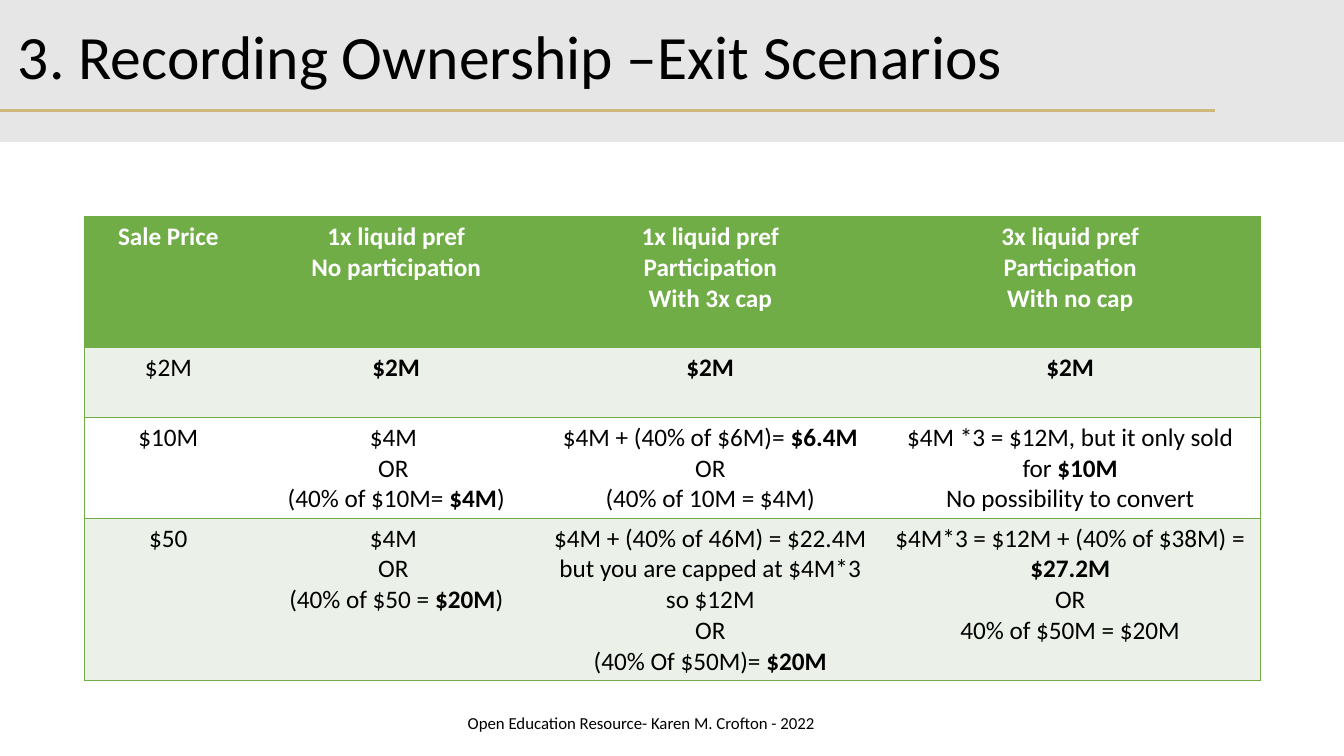
from lxml.etree import SubElement
from pptx import Presentation
from pptx.dml.color import RGBColor
from pptx.enum.shapes import MSO_CONNECTOR, MSO_SHAPE
from pptx.enum.text import MSO_ANCHOR, MSO_AUTO_SIZE, PP_ALIGN
from pptx.oxml.ns import qn
from pptx.util import Inches, Pt

COLORS = {
    "band": "E7E6E6",
    "rule": "CEB87B",
    "green": "70AD47",
    "tint": "EBF1E9",
    "white": "FFFFFF",
    "black": "000000",
}
FONT = "Calibri"
COLUMN_WIDTHS = [1.66, 2.86, 3.37, 3.77]
ROW_HEIGHTS = [1.3, 0.69, 1.0, 1.61]
ROW_FILLS = ["green", "tint", "white", "tint"]
BOLD_MARK = "|"
SCENARIOS = [
    [
        ["|Sale Price|"],
        ["|1x liquid pref|", "|No participation|"],
        ["|1x liquid pref|", "|Participation|", "|With 3x cap|"],
        ["|3x liquid pref|", "|Participation|", "|With no cap|"],
    ],
    [["$2M"], ["|$2M|"], ["|$2M|"], ["|$2M|"]],
    [
        ["$10M"],
        ["$4M ", "OR ", "(40% of $10M= |$4M|)"],
        ["$4M + (40% of $6M)= |$6.4M|", "OR", "(40% of 10M = $4M)"],
        ["$4M *3 = $12M, but it only sold for |$10M|", "No possibility to convert"],
    ],
    [
        ["$50"],
        ["$4M ", "OR ", "(40% of $50 = |$20M|)"],
        [
            "$4M + (40% of 46M) = $22.4M but you are capped at $4M*3 so $12M",
            "OR",
            "(40% Of $50M)= |$20M|",
        ],
        ["$4M*3 = $12M + (40% of $38M) = |$27.2M|", "OR", "40% of $50M = $20M"],
    ],
]


def rgb(name):
    return RGBColor.from_string(COLORS[name])


def format_run(run, size, color="black", bold=False):
    run.font.name = FONT
    run.font.size = Pt(size)
    run.font.bold = bold
    run.font.color.rgb = rgb(color)


def add_band(slide, left, top, width, height):
    shape = slide.shapes.add_shape(
        MSO_SHAPE.RECTANGLE, Inches(left), Inches(top), Inches(width), Inches(height)
    )
    shape.shadow.inherit = False
    shape.fill.solid()
    shape.fill.fore_color.rgb = rgb("band")
    shape.line.fill.background()


def add_rule(slide, left, top, right):
    connector = slide.shapes.add_connector(
        MSO_CONNECTOR.STRAIGHT, Inches(left), Inches(top), Inches(right), Inches(top)
    )
    connector.line.color.rgb = rgb("rule")
    connector.line.width = Pt(2)
    SubElement(connector.element.spPr, qn("a:effectLst"))


def add_text(slide, left, top, width, height, text, size):
    box = slide.shapes.add_textbox(
        Inches(left), Inches(top), Inches(width), Inches(height)
    )
    text_frame = box.text_frame
    text_frame.word_wrap = True
    text_frame.text = text
    format_run(text_frame.paragraphs[0].runs[0], size)
    return text_frame


def set_borders(cell, visible_sides):
    properties = cell._tc.get_or_add_tcPr()
    for side in "LRTB":
        line = SubElement(properties, qn(f"a:ln{side}"), w=str(Pt(1)))
        if side in visible_sides:
            fill = SubElement(line, qn("a:solidFill"))
            SubElement(fill, qn("a:srgbClr"), val=COLORS["green"])
        else:
            SubElement(line, qn("a:noFill"))


def fill_cell(cell, lines, fill, text_color):
    cell.fill.solid()
    cell.fill.fore_color.rgb = rgb(fill)
    text_frame = cell.text_frame
    for index, line in enumerate(lines):
        paragraph = text_frame.add_paragraph() if index else text_frame.paragraphs[0]
        paragraph.alignment = PP_ALIGN.CENTER
        for position, part in enumerate(line.split(BOLD_MARK)):
            if part:
                run = paragraph.add_run()
                run.text = part
                format_run(run, 18, text_color, bold=position % 2 == 1)


def add_scenario_table(slide, left, top):
    last = len(COLUMN_WIDTHS) - 1
    table = slide.shapes.add_table(
        len(ROW_HEIGHTS),
        len(COLUMN_WIDTHS),
        Inches(left),
        Inches(top),
        Inches(sum(COLUMN_WIDTHS)),
        Inches(sum(ROW_HEIGHTS)),
    ).table
    table.horz_banding = False
    for column, width in zip(table.columns, COLUMN_WIDTHS):
        column.width = Inches(width)
    for row_index, (row, height) in enumerate(zip(table.rows, ROW_HEIGHTS)):
        row.height = Inches(height)
        text_color = "black" if row_index else "white"
        for column_index, lines in enumerate(SCENARIOS[row_index]):
            cell = table.cell(row_index, column_index)
            set_borders(cell, "TB" + {0: "L", last: "R"}.get(column_index, ""))
            fill_cell(cell, lines, ROW_FILLS[row_index], text_color)


def main():
    presentation = Presentation()
    presentation.slide_width = Inches(13.33)
    presentation.slide_height = Inches(7.5)
    slide = presentation.slides.add_slide(presentation.slide_layouts[6])

    add_band(slide, 0, 0, 13.33, 1.41)
    add_rule(slide, 0, 1.1, 12.05)
    footer = add_text(
        slide, 4.54, 7.02, 6.68, 0.3,
        "Open Education Resource- Karen M. Crofton - 2022", 12,
    )
    footer.auto_size = MSO_AUTO_SIZE.SHAPE_TO_FIT_TEXT
    title = add_text(
        slide, 0.08, 0.2, 11.5, 0.79, "3. Recording Ownership –Exit Scenarios", 44
    )
    title.vertical_anchor = MSO_ANCHOR.MIDDLE
    title.paragraphs[0].line_spacing = 0.9
    add_scenario_table(slide, 0.84, 2.15)

    presentation.save("out.pptx")


if __name__ == "__main__":
    main()
